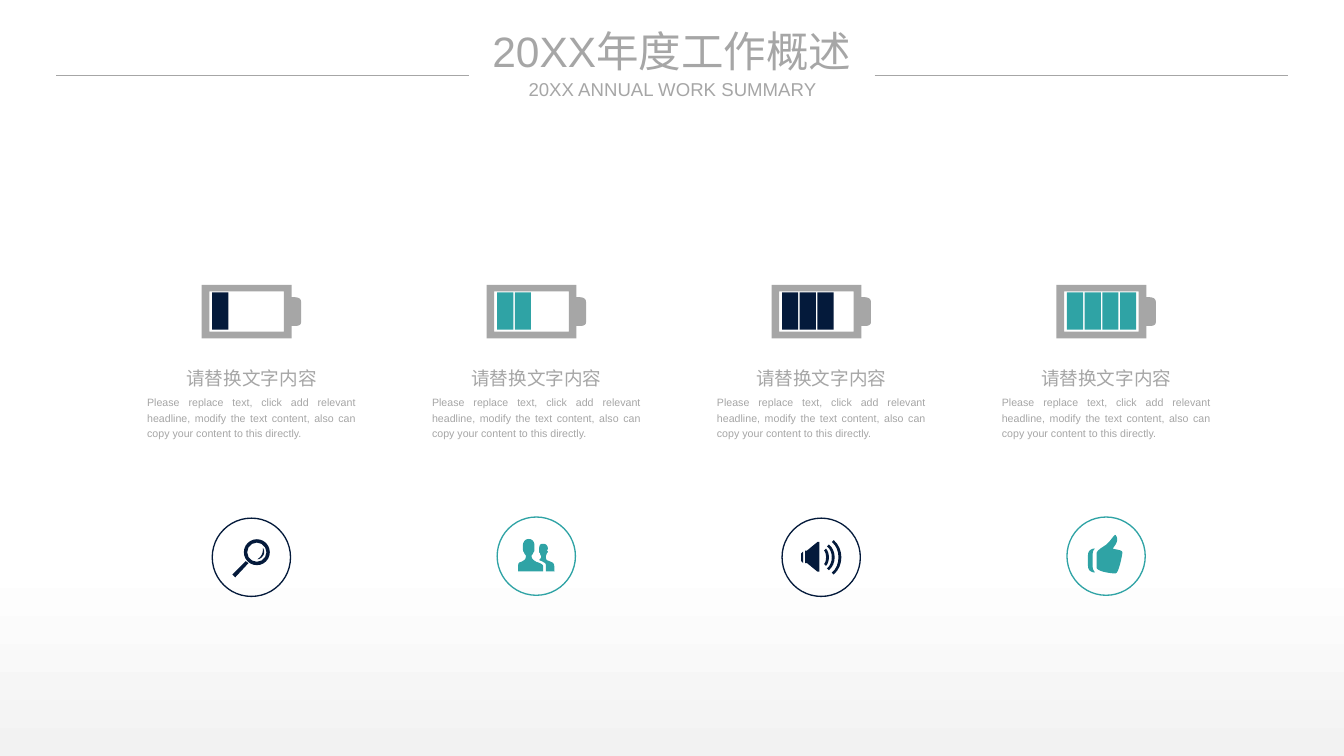
from lxml.etree import SubElement
from pptx import Presentation
from pptx.dml.color import RGBColor
from pptx.enum.shapes import MSO_CONNECTOR as Connector, MSO_SHAPE as Shape
from pptx.enum.text import MSO_ANCHOR as Anchor, MSO_AUTO_SIZE as AutoSize, PP_ALIGN as Align
from pptx.oxml.ns import qn
from pptx.util import Cm, Pt

COLOURS = {"grey": "A6A6A6", "navy": "041A3B", "teal": "2FA3A5", "pale": "F2F2F2", "white": "FFFFFF"}
FONT = "Arial"
UNIT = Cm(2.54) / 100
CURVE_STEPS = 8

HEADING = "请替换文字内容"
BODY = ("Please replace text, click add relevant headline, modify the text content, "
        "also can copy your content to this directly.")

BATTERY = [
    [(94, 13), (94, 0), (0, 0), (0, 56), (94, 56), (94, 43), (97, 43, 104, 44, 104, 39),
     (104, 18), (104, 12, 96, 13, 94, 13)],
    [(86, 49), (8, 49), (8, 7), (86, 7)],
]
MAGNIFIER = [
    [(21, 59), (24, 62), (38, 47), (35, 45)],
    [(53, 31), (54, 40, 47, 43, 47, 43), (49, 43), (58, 38, 53, 31, 53, 31)],
]
PEOPLE = [
    [(60, 57), (60, 57, 60, 49, 59, 49), (59, 48, 57, 47, 54, 46), (51, 45, 51, 44, 51, 41),
     (51, 40, 51, 41, 52, 38), (52, 37, 53, 38, 53, 36), (52, 35), (52, 35, 53, 34, 53, 33),
     (53, 31, 52, 28, 48, 28), (44, 28, 44, 31, 44, 33), (44, 36), (44, 38, 44, 37, 45, 38),
     (45, 41, 46, 40, 46, 41), (46, 43, 45, 44, 44, 45), (50, 48, 51, 48, 51, 51), (51, 57)],
    [(41, 47), (38, 45, 36, 44, 36, 41), (36, 39, 37, 40, 38, 37), (38, 36, 39, 37, 39, 34),
     (39, 29), (39, 28, 38, 23, 33, 23), (28, 23, 27, 28, 27, 29), (27, 34),
     (27, 37, 28, 36, 28, 37), (29, 40, 30, 39, 30, 41), (30, 44, 29, 45, 25, 47),
     (24, 47, 22, 48, 22, 50), (22, 57), (48, 57), (48, 57, 48, 53, 48, 51),
     (48, 50, 45, 48, 41, 47)],
]
THUMB = [
    [(48, 33), (48, 32, 56, 25, 51, 19), (50, 17, 46, 25, 41, 29), (38, 31, 31, 35, 31, 38),
     (31, 53), (31, 56, 42, 59, 51, 59), (54, 59, 58, 40, 58, 37), (58, 34, 49, 34, 48, 33)],
    [(29, 33), (27, 33, 22, 34, 22, 40), (22, 51), (22, 57, 27, 58, 29, 58),
     (30, 58, 27, 56, 27, 53), (27, 38), (27, 34, 30, 33, 29, 33)],
]


def sound_wave(start, half, bulge, middle=41):
    top, bottom = middle - half, middle + half
    outer, inner = start + bulge * 4 / 3, start - 2 + (bulge - 1) * 4 / 3
    return [(start, top), (outer, top + half / 2, outer, bottom - half / 2, start, bottom),
            (start - 2, bottom - 2),
            (inner, bottom - half / 2, inner, top + half / 2, start - 2, top + 2)]


SPEAKER = [
    [(37, 25), (26, 34), (24, 34), (24, 47), (26, 47), (37, 56), (39, 56), (39, 25)],
    [(20, 37), (20, 45), (22, 47), (22, 35)],
    *(sound_wave(*wave) for wave in ((46, 9, 3), (49, 13.5, 6), (54, 18, 8))),
]


def flatten(contour):
    points = [contour[0]]
    for segment in contour[1:]:
        if len(segment) == 2:
            points.append(segment)
            continue
        corners = [points[-1], segment[:2], segment[2:4], segment[4:]]
        for step in range(1, CURVE_STEPS + 1):
            t = step / CURVE_STEPS
            weights = ((1 - t) ** 3, 3 * t * (1 - t) ** 2, 3 * t * t * (1 - t), t ** 3)
            points.append(tuple(sum(weight * corner[axis] for weight, corner in zip(weights, corners))
                                for axis in (0, 1)))
    return [(x * UNIT, y * UNIT) for x, y in points]


class SlideBuilder:
    def __init__(self, slide):
        self.slide = slide
        self.shapes = slide.shapes

    def colour(self, name):
        return RGBColor.from_string(COLOURS[name])

    def background(self, bottom, top):
        fill = self.slide.background.fill
        fill.gradient()
        fill.gradient_angle = 90
        for stop, name, position in zip(fill.gradient_stops, (bottom, top), (0, 0.26)):
            stop.color.rgb = self.colour(name)
            stop.position = position

    def paint(self, shape, colour):
        shape.shadow.inherit = False
        shape.fill.solid()
        shape.fill.fore_color.rgb = self.colour(colour)
        shape.line.fill.background()
        return shape

    def block(self, kind, left, top, width, height, colour):
        shape = self.shapes.add_shape(kind, Cm(left), Cm(top), Cm(width), Cm(height))
        return self.paint(shape, colour)

    def ring(self, left, top, size, colour):
        shape = self.block(Shape.OVAL, left, top, size, size, colour)
        shape.fill.background()
        shape.line.color.rgb = self.colour(colour)
        shape.line.width = Pt(1)
        return shape

    def outline(self, contours, left, top, colour):
        first, *others = [flatten(contour) for contour in contours]
        builder = self.shapes.build_freeform(*first[0], scale=1.0)
        builder.add_line_segments(first[1:])
        for points in others:
            builder.move_to(*points[0])
            builder.add_line_segments(points[1:])
        return self.paint(builder.convert_to_shape(Cm(left), Cm(top)), colour)

    def fill_text(self, shape, text, size, align, spacing=1.0):
        text_frame = shape.text_frame
        text_frame.text = text
        text_frame.word_wrap = True
        text_frame.auto_size = AutoSize.NONE
        paragraph = text_frame.paragraphs[0]
        paragraph.alignment = align
        paragraph.line_spacing = spacing
        for run in paragraph.runs:
            run.font.name = FONT
            run.font.size = Pt(size)
            run.font.color.rgb = self.colour("grey")

    def text(self, left, top, width, height, text, size, align, spacing=1.0):
        shape = self.shapes.add_textbox(Cm(left), Cm(top), Cm(width), Cm(height))
        self.fill_text(shape, text, size, align, spacing)
        return shape

    def centre_tightly(self, shape):
        text_frame = shape.text_frame
        text_frame.margin_left = text_frame.margin_right = 0
        text_frame.margin_top = text_frame.margin_bottom = 0
        text_frame.vertical_anchor = Anchor.MIDDLE

    def title(self, left, top, width, height, text, size):
        shape = self.shapes.title
        shape.left, shape.top, shape.width, shape.height = Cm(left), Cm(top), Cm(width), Cm(height)
        self.fill_text(shape, text, size, Align.CENTER)
        self.centre_tightly(shape)

    def rule(self, left, right, y):
        line = self.shapes.add_connector(Connector.STRAIGHT, Cm(left), Cm(y), Cm(right), Cm(y))
        line.line.color.rgb = self.colour("grey")
        line.line.width = Pt(1)
        SubElement(line._element.spPr, qn("a:effectLst"))

    def battery(self, left, level, colour):
        parts = [self.outline(BATTERY, left, 7.57, "grey")]
        for cell in range(level):
            parts.append(self.block(Shape.RECTANGLE, left + 0.28 + 0.47 * cell, 7.77, 0.43, 0.99, colour))
        self.shapes.add_group_shape(parts)

    def badge(self, left, top, icon, colour):
        parts = [self.ring(left, top, 2.08, colour), self.outline(icon, left, top, colour)]
        if icon is MAGNIFIER:
            lens = self.block(Shape.DONUT, left + 0.84, top + 0.56, 0.69, 0.69, colour)
            lens.adjustments[0] = 0.13
            parts.append(lens)
        self.shapes.add_group_shape(parts)


def main():
    presentation = Presentation()
    presentation.slide_width, presentation.slide_height = Cm(35.71), Cm(20.09)
    builder = SlideBuilder(presentation.slides.add_slide(presentation.slide_layouts[5]))
    builder.background("pale", "white")

    builder.title(12.37, 0.66, 10.97, 1.37, "20XX年度工作概述", 32)
    subtitle = builder.text(13.97, 2.06, 7.8, 0.61, "20XX ANNUAL WORK SUMMARY", 14, Align.CENTER)
    builder.centre_tightly(subtitle)
    for left in (1.5, 23.24):
        builder.rule(left, left + 10.97, 2.01)

    columns = ((MAGNIFIER, "navy", 13.77), (PEOPLE, "teal", 13.74),
               (SPEAKER, "navy", 13.77), (THUMB, "teal", 13.74))
    for index, (icon, colour, badge_top) in enumerate(columns):
        left = 3.66 + 7.57 * index
        builder.battery(left + 1.7, index + 1, colour)
        builder.text(left, 9.5, 6.05, 0.99, HEADING, 14, Align.CENTER, 1.2)
        builder.text(left, 10.34, 6.05, 2.21, BODY, 8, Align.JUSTIFY, 1.2)
        builder.badge(left + 1.98, badge_top, icon, colour)

    presentation.save("out.pptx")


if __name__ == "__main__":
    main()
